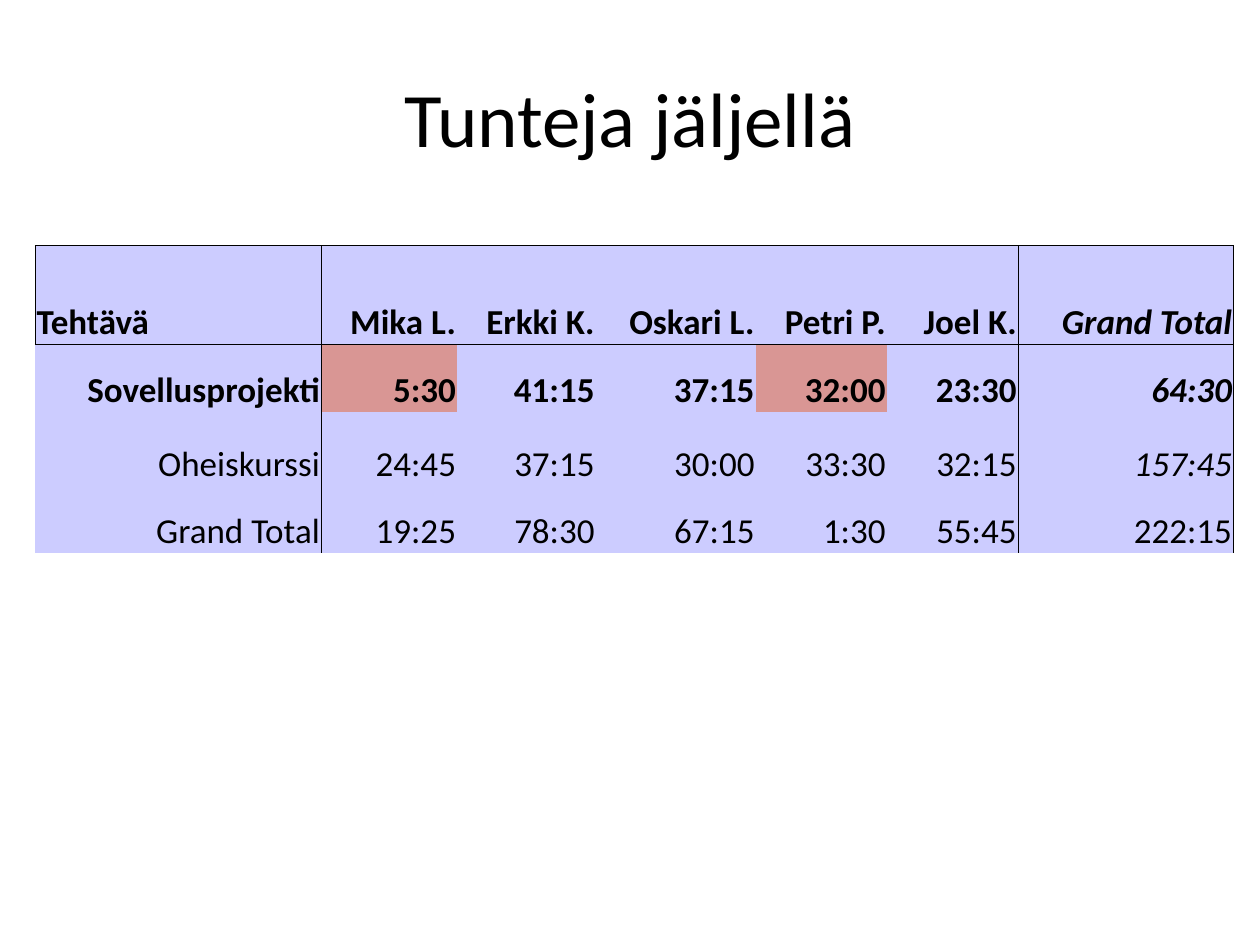
from dataclasses import dataclass

from pptx import Presentation, util as u
from pptx.dml.color import RGBColor
from pptx.enum import text
from pptx.oxml import parse_xml
from pptx.oxml.ns import nsdecls


@dataclass
class Theme:
    font: str = "Calibri"
    ink: str = "000000"
    base: str = "CCCCFF"
    alert: str = "D99694"
    head: int = 44
    body: int = 20
    rule: float = 0.5


class Deck:
    COLS, ROWS = 100, 75

    def __init__(self, theme):
        self.theme = theme
        self.show = Presentation()
        self.show.slide_width = u.Inches(10)
        self.show.slide_height = u.Inches(7.5)
        self.slide = self.show.slides.add_slide(self.show.slide_layouts[5])

    def wide(self, cols):
        return round(self.show.slide_width * cols / self.COLS)

    def high(self, rows):
        return round(self.show.slide_height * rows / self.ROWS)

    def place(self, left, top, width, height):
        return self.wide(left), self.high(top), self.wide(width), self.high(height)

    def style(self, par, size, align, bold=False, italic=False):
        par.alignment = align
        font = par.font
        font.name, font.size = self.theme.font, u.Pt(size)
        font.bold, font.italic = bold, italic
        font.color.rgb = RGBColor.from_string(self.theme.ink)

    def title(self, words, box):
        shape = self.slide.shapes.title
        shape.left, shape.top, shape.width, shape.height = self.place(*box)
        frame = shape.text_frame
        frame.text = words
        frame.vertical_anchor = text.MSO_ANCHOR.MIDDLE
        self.style(frame.paragraphs[0], self.theme.head, text.PP_ALIGN.CENTER)

    def edges(self, cell, sides):
        props = cell._tc.get_or_add_tcPr()
        for spot, side in enumerate("LRTB"):
            paint = "<a:noFill/>"
            if side in sides:
                paint = f'<a:solidFill><a:srgbClr val="{self.theme.ink}"/></a:solidFill>'
            width = u.Pt(self.theme.rule)
            props.insert(spot, parse_xml(
                f'<a:ln{side} {nsdecls("a")} w="{width}">{paint}</a:ln{side}>'))

    def cell(self, cell, words, fill, align, bold, italic, sides):
        cell.text = words
        cell.vertical_anchor = text.MSO_ANCHOR.BOTTOM
        cell.margin_left = cell.margin_right = cell.margin_top = u.Inches(0.01)
        cell.margin_bottom = 0
        cell.fill.solid()
        cell.fill.fore_color.rgb = RGBColor.from_string(fill)
        self.style(cell.text_frame.paragraphs[0], self.theme.body, align, bold, italic)
        self.edges(cell, sides)

    def table(self, data, left, top, widths, heights, alerts):
        box = self.place(left, top, sum(widths), sum(heights))
        grid = self.slide.shapes.add_table(len(heights), len(widths), *box).table
        for col, width in zip(grid.columns, widths):
            col.width = self.wide(width)
        for row, height in zip(grid.rows, heights):
            row.height = self.high(height)
        last = len(widths) - 1
        for r, line in enumerate(data):
            for c, words in enumerate(line):
                rules = {
                    "L": c in (1, last) or r == c == 0,
                    "R": c in (0, last - 1, last),
                    "T": r < 2,
                    "B": r == 0,
                }
                self.cell(
                    grid.cell(r, c), words,
                    fill=self.theme.alert if (r, c) in alerts else self.theme.base,
                    align=text.PP_ALIGN.LEFT if r == c == 0 else text.PP_ALIGN.RIGHT,
                    bold=r < 2,
                    italic=c == last and r < len(data) - 1,
                    sides=[side for side, on in rules.items() if on],
                )


HOURS = [
    ["Tehtävä", "Mika L.", "Erkki K.", "Oskari L.", "Petri P.", "Joel K.", "Grand Total"],
    ["Sovellusprojekti", "5:30", "41:15", "37:15", "32:00", "23:30", "64:30"],
    ["Oheiskurssi", "24:45", "37:15", "30:00", "33:30", "32:15", "157:45"],
    ["Grand Total", "19:25", "78:30", "67:15", "1:30", "55:45", "222:15"],
]


def main():
    deck = Deck(Theme())
    deck.title("Tunteja jäljellä", (5, 3, 90, 12.5))
    deck.table(
        HOURS, 2.8, 19.5,
        widths=[22.7, 10.8, 11, 12.7, 10.4, 10.4, 17.1],
        heights=[7.8, 5.4, 5.9, 5.3],
        alerts={(1, 1), (1, 4)},
    )
    deck.show.save("out.pptx")


if __name__ == "__main__":
    main()
